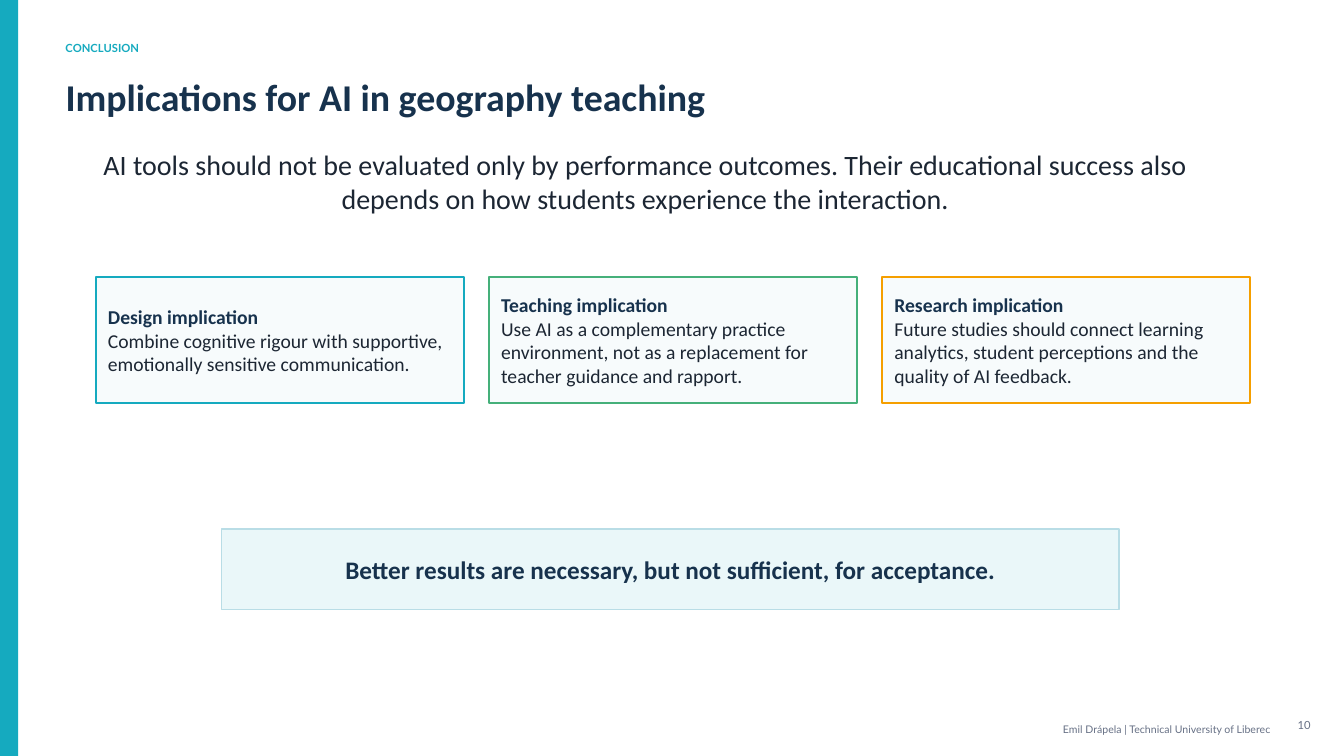
from pptx import Presentation
from pptx.dml.color import RGBColor
from pptx.enum import shapes, text
from pptx.util import Inches, Pt

TEAL = RGBColor(0x15, 0xAA, 0xBF)
GREEN = RGBColor(0x45, 0xB0, 0x7A)
ORANGE = RGBColor(0xF5, 0x9F, 0x00)
NAVY = RGBColor(0x17, 0x32, 0x4D)
INK = RGBColor(0x1C, 0x26, 0x33)
GREY = RGBColor(0x66, 0x70, 0x85)
CARD_FILL = RGBColor(0xF7, 0xFB, 0xFC)
BANNER_FILL = RGBColor(0xEA, 0xF7, 0xF9)
BANNER_LINE = RGBColor(0xB9, 0xDD, 0xE6)
LEFT, CENTER, RIGHT = text.PP_ALIGN.LEFT, text.PP_ALIGN.CENTER, text.PP_ALIGN.RIGHT

prs = Presentation()
prs.slide_width, prs.slide_height = Inches(13.33), Inches(7.5)
slide = prs.slides.add_slide(prs.slide_layouts[5])


def add_box(left, top, width, height, fill, line=None, line_width=1):
    box = slide.shapes.add_shape(shapes.MSO_SHAPE.RECTANGLE, Inches(left), Inches(top),
                                 Inches(width), Inches(height))
    box.shadow.inherit = False
    box.fill.solid()
    box.fill.fore_color.rgb = fill
    if line is None:
        box.line.fill.background()
    else:
        box.line.color.rgb = line
        box.line.width = Pt(line_width)
    return box


def write(holder, words, size, color, font="Calibri", bold=False, align=LEFT, inset=0):
    frame = holder.text_frame
    frame.word_wrap = True
    frame.auto_size = text.MSO_AUTO_SIZE.NONE
    frame.vertical_anchor = text.MSO_ANCHOR.MIDDLE
    frame.margin_left = frame.margin_right = Inches(inset)
    frame.margin_top = frame.margin_bottom = 0
    paragraph = frame.paragraphs[0]
    paragraph.alignment = align
    paragraph.add_run().text = words
    paragraph.font.name = font
    paragraph.font.size = Pt(size)
    paragraph.font.bold = bold
    paragraph.font.color.rgb = color
    return paragraph


# Side bar
add_box(0, 0, 0.18, 7.5, TEAL)

# Title
title = slide.shapes.title
title.left, title.top = Inches(0.65), Inches(0.68)
title.width, title.height = Inches(8.7), Inches(0.55)
write(title, "Implications for AI in geography teaching", 27, NAVY, bold=True)

# Section label, lead statement, footer and page number
lead = ("AI tools should not be evaluated only by performance outcomes. Their educational "
        "success also depends on how students experience the interaction.")
footer = "Emil Drápela | Technical University of Liberec"
for left, top, width, height, words, size, color, font, bold, align in [
    (0.65, 0.35, 2.8, 0.25, "CONCLUSION", 8, TEAL, "Lato", True, LEFT),
    (0.9, 1.45, 11, 0.7, lead, 20, INK, "Calibri", False, CENTER),
    (8.75, 7.12, 3.85, 0.22, footer, 7.5, GREY, "Lato", False, RIGHT),
    (12.65, 7.08, 0.35, 0.22, "10", 8, GREY, "Lato", False, RIGHT),
]:
    label = slide.shapes.add_textbox(Inches(left), Inches(top), Inches(width), Inches(height))
    write(label, words, size, color, font, bold, align)

# Implication cards
implications = [
    ("Design implication", TEAL,
     "Combine cognitive rigour with supportive, emotionally sensitive communication."),
    ("Teaching implication", GREEN,
     "Use AI as a complementary practice environment, not as a replacement for "
     "teacher guidance and rapport."),
    ("Research implication", ORANGE,
     "Future studies should connect learning analytics, student perceptions and "
     "the quality of AI feedback."),
]
for i, (heading, accent, advice) in enumerate(implications):
    card = add_box(0.95 + i * 3.9, 2.75, 3.65, 1.25, CARD_FILL, accent, 1.2)
    paragraph = write(card, heading, 14, INK, inset=0.12)
    heading_run = paragraph.runs[0]
    heading_run.font.bold = True
    heading_run.font.color.rgb = NAVY
    paragraph.add_line_break()
    paragraph.add_run().text = advice

# Closing banner
banner = add_box(2.2, 5.25, 8.9, 0.8, BANNER_FILL, BANNER_LINE)
write(banner, "Better results are necessary, but not sufficient, for acceptance.", 18, NAVY,
      bold=True, align=CENTER)

prs.save("out.pptx")
